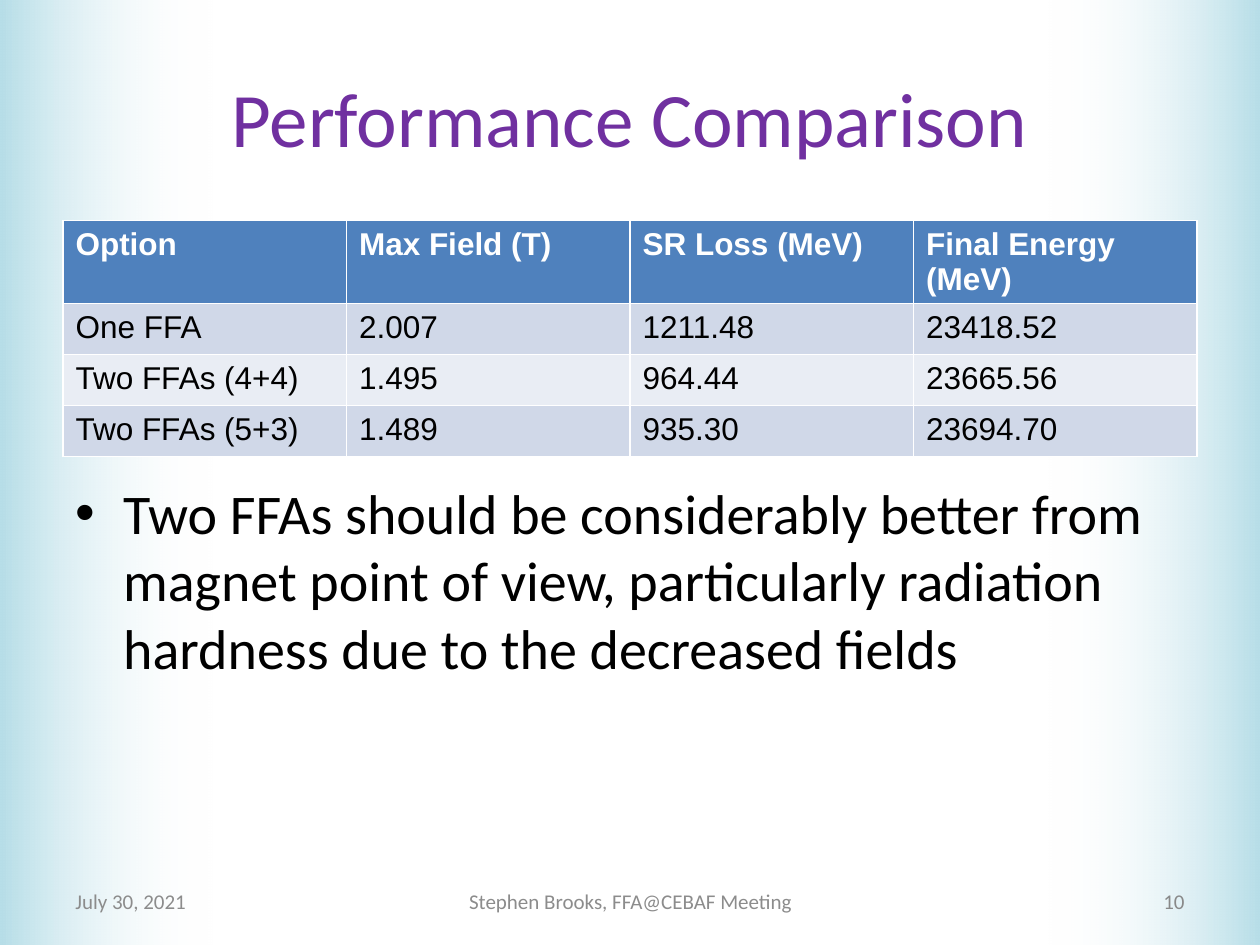
from lxml import etree
from pptx import Presentation
from pptx.dml.color import RGBColor
from pptx.enum.shapes import MSO_SHAPE
from pptx.enum.text import MSO_ANCHOR, PP_ALIGN
from pptx.oxml.ns import qn
from pptx.util import Inches, Pt

RECTANGLE = MSO_SHAPE.RECTANGLE
TOP, MIDDLE = MSO_ANCHOR.TOP, MSO_ANCHOR.MIDDLE
LEFT, CENTER, RIGHT = PP_ALIGN.LEFT, PP_ALIGN.CENTER, PP_ALIGN.RIGHT
TITLE_ONLY = 5

RESULTS = [
    ["Option", "Max Field (T)", "SR Loss (MeV)", "Final Energy (MeV)"],
    ["One FFA", "2.007", "1211.48", "23418.52"],
    ["Two FFAs (4+4)", "1.495", "964.44", "23665.56"],
    ["Two FFAs (5+3)", "1.489", "935.30", "23694.70"],
]
HEADER_FILL = "4F81BD"
BAND_FILLS = ["D0D8E8", "E9EDF4"]


def rgb(value):
    return RGBColor.from_string(value)


def inches(box):
    return [Inches(length) for length in box]


def set_font(paragraph, size, color, name="Calibri", bold=False):
    font = paragraph.font
    font.size, font.name, font.bold = Pt(size), name, bold
    font.color.rgb = rgb(color)


def add_edge_glow(slide, box, rotation):
    """Pale blue band that fades to transparent white."""
    glow = slide.shapes.add_shape(RECTANGLE, *inches(box))
    glow.shadow.inherit = False
    glow.rotation = rotation
    glow.line.fill.background()
    glow.fill.gradient()
    glow.fill.gradient_angle = 0
    outer, inner = glow.fill.gradient_stops
    outer.position, inner.position = 0, 1
    outer.color.rgb, inner.color.rgb = rgb("B7DEE8"), rgb("FFFFFF")
    inner_color = glow.element.spPr.findall(".//" + qn("a:srgbClr"))[-1]
    etree.SubElement(inner_color, qn("a:alpha"), val="0")


def place_title(slide, box, text):
    title = slide.shapes.title
    title.left, title.top, title.width, title.height = inches(box)
    title.text_frame.text = text
    title.text_frame.vertical_anchor = MIDDLE
    heading = title.text_frame.paragraphs[0]
    heading.alignment = CENTER
    set_font(heading, 44, "7030A0")
    # Bring the title in front of the edge bands
    slide.shapes.element.append(title.element)


def add_results_table(slide, box, rows):
    table = slide.shapes.add_table(len(rows), len(rows[0]), *inches(box)).table
    for row_index, row in enumerate(rows):
        is_header = row_index == 0
        fill = HEADER_FILL if is_header else BAND_FILLS[(row_index - 1) % 2]
        for column_index, text in enumerate(row):
            cell = table.cell(row_index, column_index)
            cell.text = text
            cell.fill.solid()
            cell.fill.fore_color.rgb = rgb(fill)
            set_font(cell.text_frame.paragraphs[0], 18,
                     "FFFFFF" if is_header else "000000", "Arial", is_header)


def add_text(slide, box, text, size, color, align=LEFT, anchor=TOP):
    frame = slide.shapes.add_textbox(*inches(box)).text_frame
    frame.word_wrap = True
    frame.vertical_anchor = anchor
    paragraph = frame.paragraphs[0]
    paragraph.text = text
    paragraph.alignment = align
    set_font(paragraph, size, color)
    return paragraph


def add_conclusion(slide, box, text):
    conclusion = add_text(slide, box, text, 32, "000000")
    conclusion.space_before = Pt(6.4)
    properties = conclusion._p.get_or_add_pPr()
    indent = Inches(0.38)
    properties.set("marL", str(indent))
    properties.set("indent", str(-indent))
    bullet_font = etree.Element(qn("a:buFont"), typeface="Arial")
    bullet = etree.Element(qn("a:buChar"), char="•")
    properties.find(qn("a:defRPr")).addprevious(bullet_font)
    bullet_font.addnext(bullet)


def add_footer(slide, top, height):
    for left, width, text, color, align in [
        (0.5, 2.33, "July 30, 2021", "8C8C8C", LEFT),
        (3.42, 3.17, "Stephen Brooks, FFA@CEBAF Meeting", "8C8C8C", CENTER),
        (7.17, 2.33, "10", "898989", RIGHT),
    ]:
        add_text(slide, (left, top, width, height), text, 12, color, align, MIDDLE)


def main():
    presentation = Presentation()
    presentation.slide_width, presentation.slide_height = Inches(10), Inches(7.5)
    slide = presentation.slides.add_slide(presentation.slide_layouts[TITLE_ONLY])

    # Background edges
    add_edge_glow(slide, (8.31, 0, 1.69, 7.5), 180)
    add_edge_glow(slide, (0, 0, 1.69, 7.5), 0)

    # Content
    place_title(slide, (0.5, 0.3, 9, 1.25), "Performance Comparison")
    add_results_table(slide, (0.5, 1.75, 9, 1.62), RESULTS)
    add_footer(slide, 6.95, 0.4)
    add_conclusion(
        slide, (0.5, 3.75, 9, 2.95),
        "Two FFAs should be considerably better from magnet point of view, "
        "particularly radiation hardness due to the decreased fields")

    presentation.save("out.pptx")


if __name__ == "__main__":
    main()
